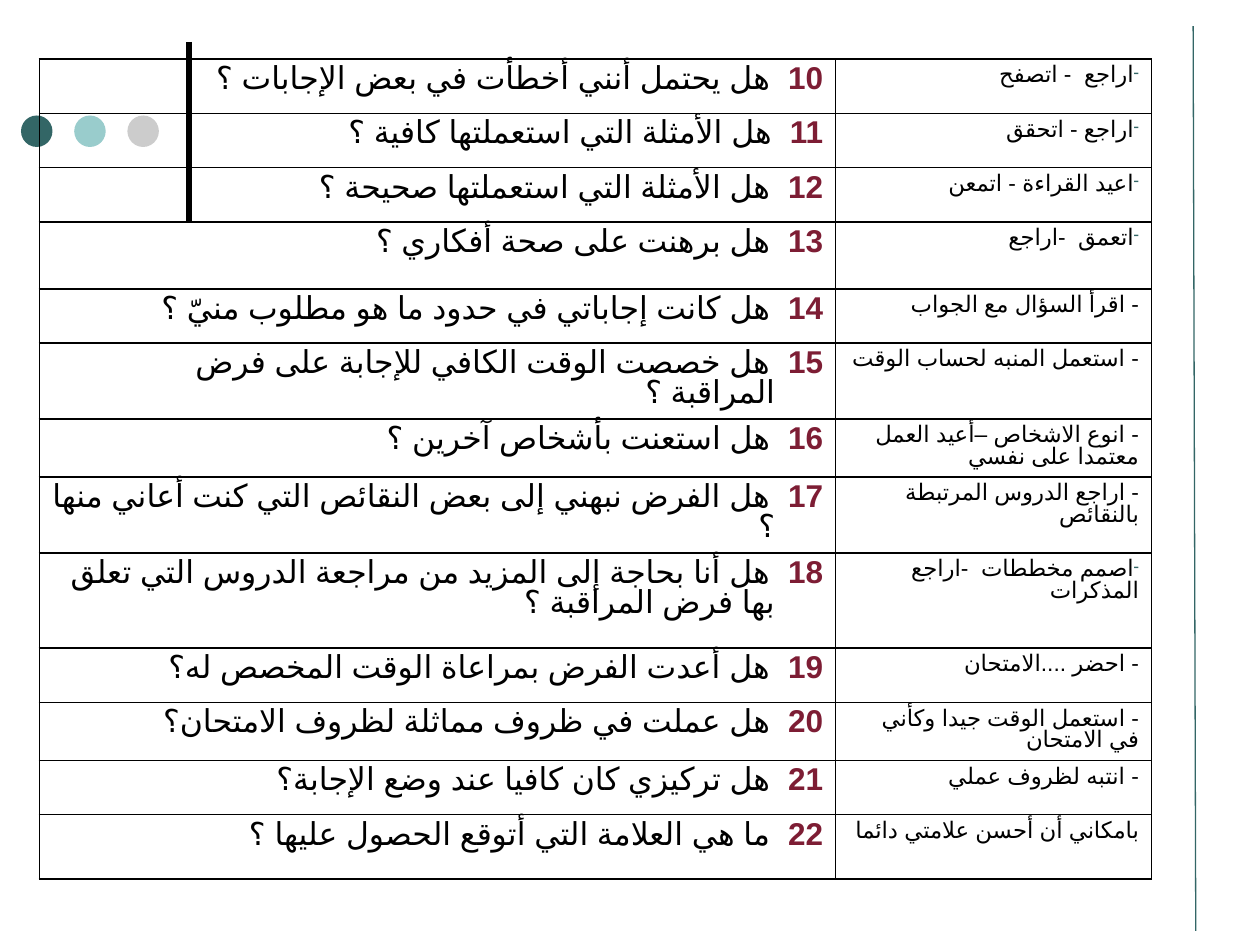
from lxml import etree
from pptx import Presentation, util as u
from pptx.dml.color import RGBColor
from pptx.enum import lang, shapes, text
from pptx.oxml.ns import qn

COLORS = {"black": "000000", "wine": "7D1D34", "teal": "336666",
          "aqua": "99CCCC", "grey": "CCCCCC"}

# Question, strategy, whether the strategy has a real dash bullet
CHECKLIST = [
    ("هل يحتمل أنني أخطأت في بعض الإجابات ؟", "اراجع  - اتصفح", True),
    ("هل الأمثلة التي استعملتها كافية ؟", "اراجع - اتحقق", True),
    ("هل الأمثلة التي استعملتها صحيحة ؟", "اعيد القراءة - اتمعن", True),
    ("هل برهنت على صحة أفكاري ؟", "اتعمق  -اراجع", True),
    ("هل كانت إجاباتي في حدود ما هو مطلوب منيّ ؟", "- اقرأ السؤال مع الجواب", False),
    ("هل خصصت الوقت الكافي للإجابة على فرض\nالمراقبة ؟",
     "- استعمل المنبه لحساب الوقت", False),
    ("هل استعنت بأشخاص آخرين ؟", "- انوع الاشخاص –أعيد العمل معتمدا على نفسي", False),
    ("هل الفرض نبهني إلى بعض النقائص التي كنت أعاني منها ؟",
     "- اراجع الدروس المرتبطة بالنقائص", False),
    ("هل أنا بحاجة إلى المزيد من مراجعة الدروس التي تعلق بها فرض المراقبة ؟",
     "اصمم مخططات  -اراجع المذكرات", True),
    ("هل أعدت الفرض بمراعاة الوقت المخصص له؟", "- احضر ....الامتحان", False),
    ("هل عملت في ظروف مماثلة لظروف الامتحان؟",
     "- استعمل الوقت جيدا وكأني في الامتحان", False),
    ("هل تركيزي كان كافيا عند وضع الإجابة؟", "- انتبه لظروف عملي", False),
    ("ما هي العلامة التي أتوقع الحصول عليها ؟", "بامكاني أن أحسن علامتي دائما", False),
]
FIRST_NUMBER = 10
COLUMN_WIDTHS = (455, 180.5)
ROW_HEIGHT = 31
TALL_ROWS = {13: 38.3, 15: 43.4, 16: 33.1, 17: 43.4, 18: 54.5, 20: 33.1, 22: 37}


class SlideBuilder:
    """Holds the text style and the current slide."""
    line_spacing = 0.86
    hanging = 27.36

    def __init__(self, slide):
        self.slide = slide

    def line(self, start, end, color, width):
        connector = self.slide.shapes.add_connector(
            shapes.MSO_CONNECTOR.STRAIGHT, *map(u.Pt, (*start, *end)))
        connector.line.color.rgb = RGBColor.from_string(COLORS[color])
        connector.line.width = u.Pt(width)
        etree.SubElement(connector._element.spPr, qn("a:effectLst"))

    def dot(self, left, top, size, color):
        shape = self.slide.shapes.add_shape(
            shapes.MSO_SHAPE.OVAL, *map(u.Pt, (left, top, size, size)))
        shape.shadow.inherit = False
        shape.fill.solid()
        shape.fill.fore_color.rgb = RGBColor.from_string(COLORS[color])
        shape.line.fill.background()

    def table(self, left, top, widths, heights):
        frame = self.slide.shapes.add_table(
            len(heights), len(widths), u.Pt(left), u.Pt(top),
            u.Pt(sum(widths)), u.Pt(sum(heights)))
        table = frame.table
        table.first_row = table.horz_banding = False
        for column, width in zip(table.columns, widths):
            column.width = u.Pt(width)
        for row, height in zip(table.rows, heights):
            row.height = u.Pt(height)
        for cell in table.iter_cells():
            self.border(cell)
            cell.fill.background()
        return table

    def border(self, cell):
        properties = cell._tc.get_or_add_tcPr()
        for side in ("lnL", "lnR", "lnT", "lnB"):
            edge = etree.SubElement(properties, qn(f"a:{side}"), w=str(u.Pt(1)))
            fill = etree.SubElement(edge, qn("a:solidFill"))
            etree.SubElement(fill, qn("a:srgbClr"), val=COLORS["black"])

    def paragraph(self, cell, hanging=0):
        paragraph = cell.text_frame.paragraphs[0]
        paragraph.alignment = text.PP_ALIGN.RIGHT
        paragraph.line_spacing = self.line_spacing
        properties = paragraph._p.get_or_add_pPr()
        properties.set("rtl", "1")
        properties.set("marL", str(u.Pt(hanging)))
        properties.set("indent", str(-u.Pt(hanging)))
        return paragraph

    def run(self, paragraph, words, size, font, color="black", bold=False):
        for index, line in enumerate(words.split("\n")):
            if index:
                paragraph.add_line_break()
            run = paragraph.add_run()
            run.text = line
            run.font.size = u.Pt(size)
            run.font.bold = bold
            run.font.name = font
            run.font.language_id = lang.MSO_LANGUAGE_ID.ARABIC
            run.font.color.rgb = RGBColor.from_string(COLORS[color])
            # Right-to-left text takes the complex-script font
            etree.SubElement(run._r.get_or_add_rPr(), qn("a:cs"), typeface="Arial")

    def dash_bullet(self, paragraph):
        properties = paragraph._p.get_or_add_pPr()
        color = etree.SubElement(properties, qn("a:buClr"))
        etree.SubElement(color, qn("a:srgbClr"), val=COLORS["teal"])
        etree.SubElement(properties, qn("a:buSzPct"), val="70000")
        etree.SubElement(properties, qn("a:buChar"), char="-")


def main():
    presentation = Presentation()
    presentation.slide_width, presentation.slide_height = u.Pt(720), u.Pt(540)
    builder = SlideBuilder(presentation.slides.add_slide(presentation.slide_layouts[6]))

    # Decoration behind the table
    builder.line((108, 24), (108, 126), "black", 3)
    for index, color in enumerate(("teal", "aqua", "grey")):
        builder.dot(12 + 30.4 * index, 66, 18, color)

    # Checklist table
    numbers = range(FIRST_NUMBER, FIRST_NUMBER + len(CHECKLIST))
    heights = [TALL_ROWS.get(number, ROW_HEIGHT) for number in numbers]
    table = builder.table(22.5, 33.8, COLUMN_WIDTHS, heights)
    for row, (number, (question, strategy, bulleted)) in enumerate(zip(numbers, CHECKLIST)):
        paragraph = builder.paragraph(table.cell(row, 0), builder.hanging)
        builder.run(paragraph, str(number), 18, "Times New Roman", "wine", bold=True)
        builder.run(paragraph, f"  {question}", 18, "Times New Roman")
        paragraph = builder.paragraph(table.cell(row, 1))
        if bulleted:
            builder.dash_bullet(paragraph)
        builder.run(paragraph, strategy, 13, "Arial")

    # Thin rule at the right edge
    builder.line((681.8, 15), (683.3, 532), "teal", 0.75)

    presentation.save("out.pptx")


if __name__ == "__main__":
    main()
